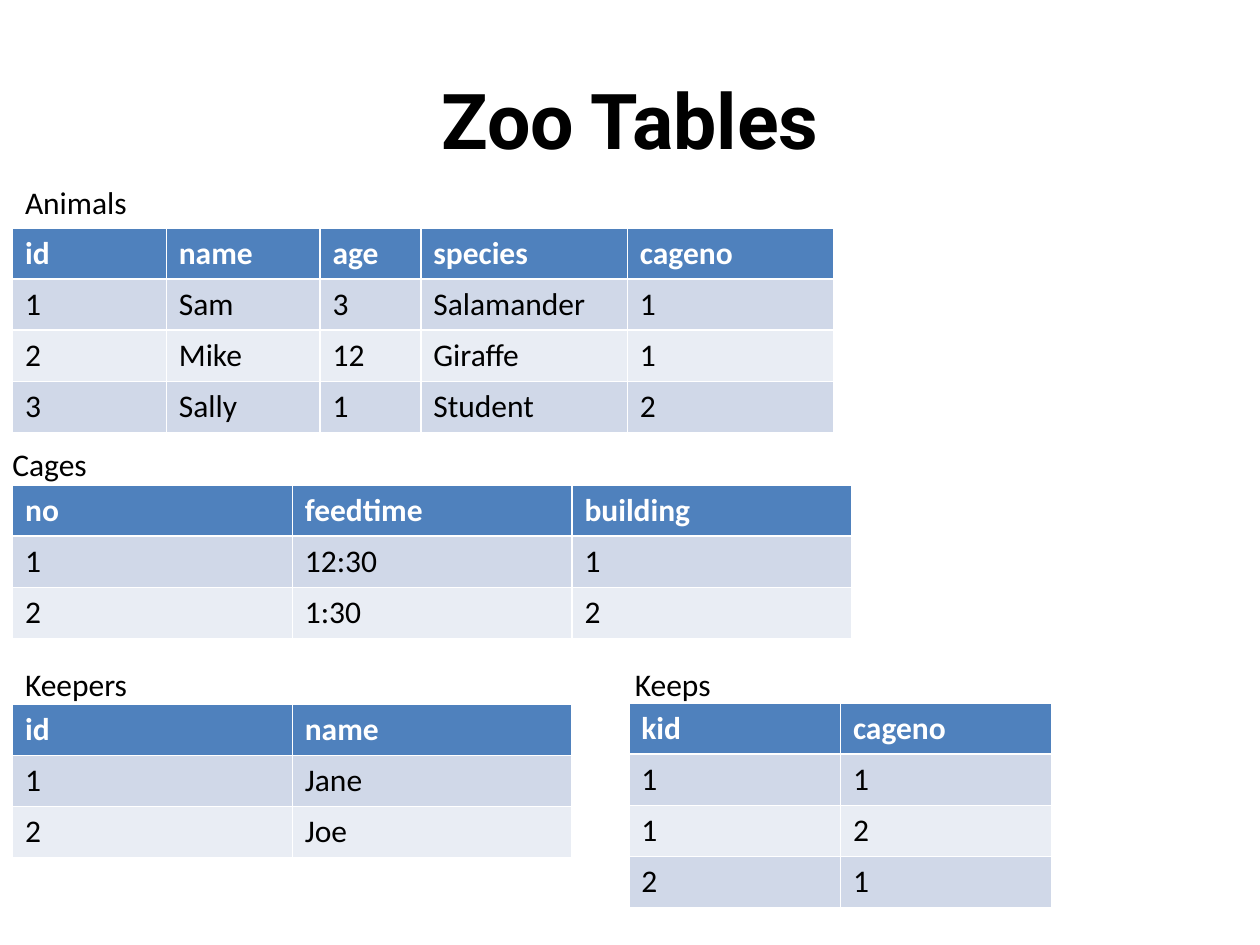
from dataclasses import dataclass

from pptx import Presentation
from pptx import util as u
from pptx.dml.color import RGBColor
from pptx.enum import text


@dataclass(frozen=True)
class Theme:
    title_font: str = "Roboto"
    body_font: str = "Calibri"
    title_size: int = 44
    body_size: int = 18
    ink: str = "000000"
    header_ink: str = "FFFFFF"
    header_fill: str = "4F81BD"
    bands: tuple[str, str] = ("D0D8E8", "E9EDF4")


@dataclass(frozen=True)
class Relation:
    name: str
    label_at: tuple[float, float]
    table_at: tuple[float, float]
    widths: tuple[float, ...]
    rows: tuple[tuple[str, ...], ...]


THEME = Theme()
ROW_HEIGHT = 0.4
LABEL_SIZE = (1.82, 0.4)

RELATIONS = (
    Relation("Animals", (0.1, 1.4), (0.1, 1.81), (1.22, 1.22, 0.8, 1.64, 1.64), (
        ("id", "name", "age", "species", "cageno"),
        ("1", "Sam", "3", "Salamander", "1"),
        ("2", "Mike", "12", "Giraffe", "1"),
        ("3", "Sally", "1", "Student", "2"),
    )),
    Relation("Cages", (0, 3.48), (0.1, 3.85), (2.22,) * 3, (
        ("no", "feedtime", "building"),
        ("1", "12:30", "1"),
        ("2", "1:30", "2"),
    )),
    Relation("Keepers", (0.1, 5.23), (0.1, 5.59), (2.22,) * 2, (
        ("id", "name"),
        ("1", "Jane"),
        ("2", "Joe"),
    )),
    Relation("Keeps", (4.94, 5.23), (4.99, 5.58), (1.68,) * 2, (
        ("kid", "cageno"),
        ("1", "1"),
        ("1", "2"),
        ("2", "1"),
    )),
)


def set_text(frame, words: str, color: str = THEME.ink, bold: bool = False,
             font: str = THEME.body_font, size: int = THEME.body_size) -> None:
    frame.text = words
    run_font = frame.paragraphs[0].runs[0].font
    run_font.name = font
    run_font.size = u.Pt(size)
    run_font.bold = bold
    run_font.color.rgb = RGBColor.from_string(color)


def add_title(slide, words: str) -> None:
    title = slide.shapes.title
    title.left, title.top = u.Inches(0.5), u.Inches(0.32)
    title.width, title.height = u.Inches(9), u.Inches(1.25)
    frame = title.text_frame
    set_text(frame, words, bold=True, font=THEME.title_font, size=THEME.title_size)
    frame.vertical_anchor = text.MSO_ANCHOR.MIDDLE
    frame.paragraphs[0].alignment = text.PP_ALIGN.CENTER


def add_label(slide, relation: Relation) -> None:
    box = slide.shapes.add_textbox(*map(u.Inches, relation.label_at + LABEL_SIZE))
    frame = box.text_frame
    frame.word_wrap = True
    frame.auto_size = text.MSO_AUTO_SIZE.SHAPE_TO_FIT_TEXT
    set_text(frame, relation.name)


def add_relation_table(slide, relation: Relation) -> None:
    """The default table style supplies the white rules between cells."""
    size = (sum(relation.widths), ROW_HEIGHT * len(relation.rows))
    table = slide.shapes.add_table(
        len(relation.rows), len(relation.widths),
        *map(u.Inches, relation.table_at + size),
    ).table
    for column, width in zip(table.columns, relation.widths):
        column.width = u.Inches(width)
    for row_index, values in enumerate(relation.rows):
        is_header = row_index == 0
        fill = THEME.header_fill if is_header else THEME.bands[(row_index - 1) % 2]
        ink = THEME.header_ink if is_header else THEME.ink
        for column_index, value in enumerate(values):
            cell = table.cell(row_index, column_index)
            cell.fill.solid()
            cell.fill.fore_color.rgb = RGBColor.from_string(fill)
            set_text(cell.text_frame, value, ink, bold=is_header)


def main() -> None:
    presentation = Presentation()
    presentation.slide_width = u.Inches(10)
    presentation.slide_height = u.Inches(7.5)
    slide = presentation.slides.add_slide(
        presentation.slide_layouts.get_by_name("Title Only"))
    add_title(slide, "Zoo Tables")
    for relation in RELATIONS:
        add_relation_table(slide, relation)
    for relation in RELATIONS:
        add_label(slide, relation)
    presentation.save("out.pptx")


if __name__ == "__main__":
    main()
